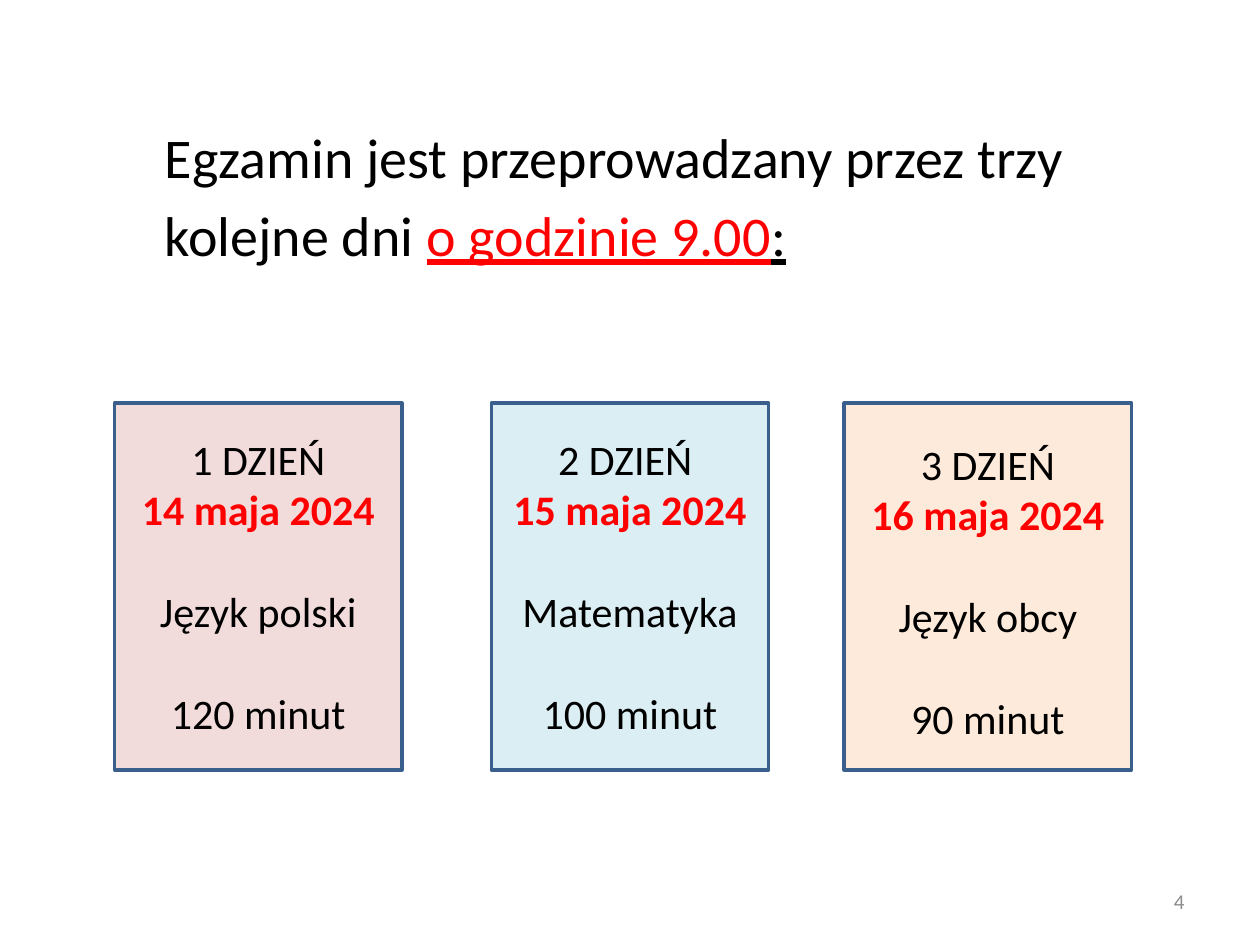
from pptx import Presentation
from pptx.dml.color import RGBColor
from pptx.enum.shapes import MSO_SHAPE
from pptx.enum.text import MSO_ANCHOR, PP_ALIGN
from pptx.util import Inches, Pt

FONT = "Calibri"
BLACK, RED, GREY, BORDER = "000000", "FF0000", "8C8C8C", "3A5F8C"

# Each headline line is a list of (text, colour, underlined).
HEADLINE = [
    [("Egzamin jest przeprowadzany przez trzy", BLACK, False)],
    [("kolejne dni ", BLACK, False), ("o godzinie 9.00", RED, True), (":", BLACK, True)],
]
# left, width, text top, fill, lines
DAYS = [
    (0.91, 2.28, 3.39, "F2DCDB", ["1 DZIEŃ", "14 maja 2024", "Język polski", "120 minut"]),
    (3.9, 2.2, 3.39, "DBEEF4", ["2 DZIEŃ ", "15 maja 2024", "Matematyka", "100 minut"]),
    (6.7, 2.28, 3.43, "FDEADA", ["3 DZIEŃ", "16 maja 2024", "Język obcy", "90 minut"]),
]
SLIDE_NUMBER = "4"
CARD_TOP, CARD_HEIGHT, DAY_TEXT_HEIGHT = 3.2, 2.91, 2.52
DATE_LINE = 1
BLANK_LINE = Pt(29.3)  # one line of 24 pt text


def color(value):
    return RGBColor.from_string(value)


def format_run(run, size, run_color, bold=False, underline=False):
    font = run.font
    font.name, font.size, font.bold, font.underline = FONT, Pt(size), bold, underline
    font.color.rgb = color(run_color)


def add_text_frame(slide, left, top, width, height):
    text_frame = slide.shapes.add_textbox(*map(Inches, (left, top, width, height))).text_frame
    text_frame.word_wrap = True
    return text_frame


def add_headline(slide):
    text_frame = add_text_frame(slide, 1.21, 0.92, 8.29, 1.5)
    text_frame.text = "\n".join("" for _ in HEADLINE)
    for paragraph, parts in zip(text_frame.paragraphs, HEADLINE):
        paragraph.space_before = Pt(6.4)
        for text, run_color, underline in parts:
            run = paragraph.add_run()
            run.text = text
            format_run(run, 32, run_color, underline=underline)


def add_day(slide, left, width, text_top, fill, lines):
    card = slide.shapes.add_shape(
        MSO_SHAPE.RECTANGLE, *map(Inches, (left, CARD_TOP, width, CARD_HEIGHT)))
    card.shadow.inherit = False
    card.fill.solid()
    card.fill.fore_color.rgb = color(fill)
    card.line.color.rgb = color(BORDER)
    card.line.width = Pt(2)

    text_frame = add_text_frame(slide, left, text_top, width, DAY_TEXT_HEIGHT)
    text_frame.text = "\n".join(lines)
    for index, paragraph in enumerate(text_frame.paragraphs):
        is_date = index == DATE_LINE
        paragraph.alignment = PP_ALIGN.CENTER
        if index > DATE_LINE:
            paragraph.space_before = BLANK_LINE
        format_run(paragraph.runs[0], 24, RED if is_date else BLACK, bold=is_date)


def add_slide_number(slide):
    text_frame = add_text_frame(slide, 7.17, 6.95, 2.33, 0.4)
    text_frame.vertical_anchor = MSO_ANCHOR.MIDDLE
    text_frame.text = SLIDE_NUMBER
    paragraph = text_frame.paragraphs[0]
    paragraph.alignment = PP_ALIGN.RIGHT
    format_run(paragraph.runs[0], 12, GREY)


def main():
    presentation = Presentation()
    presentation.slide_width, presentation.slide_height = Inches(10), Inches(7.5)
    slide = presentation.slides.add_slide(presentation.slide_layouts[6])
    add_headline(slide)
    for day in DAYS:
        add_day(slide, *day)
    add_slide_number(slide)
    presentation.save("out.pptx")


if __name__ == "__main__":
    main()
